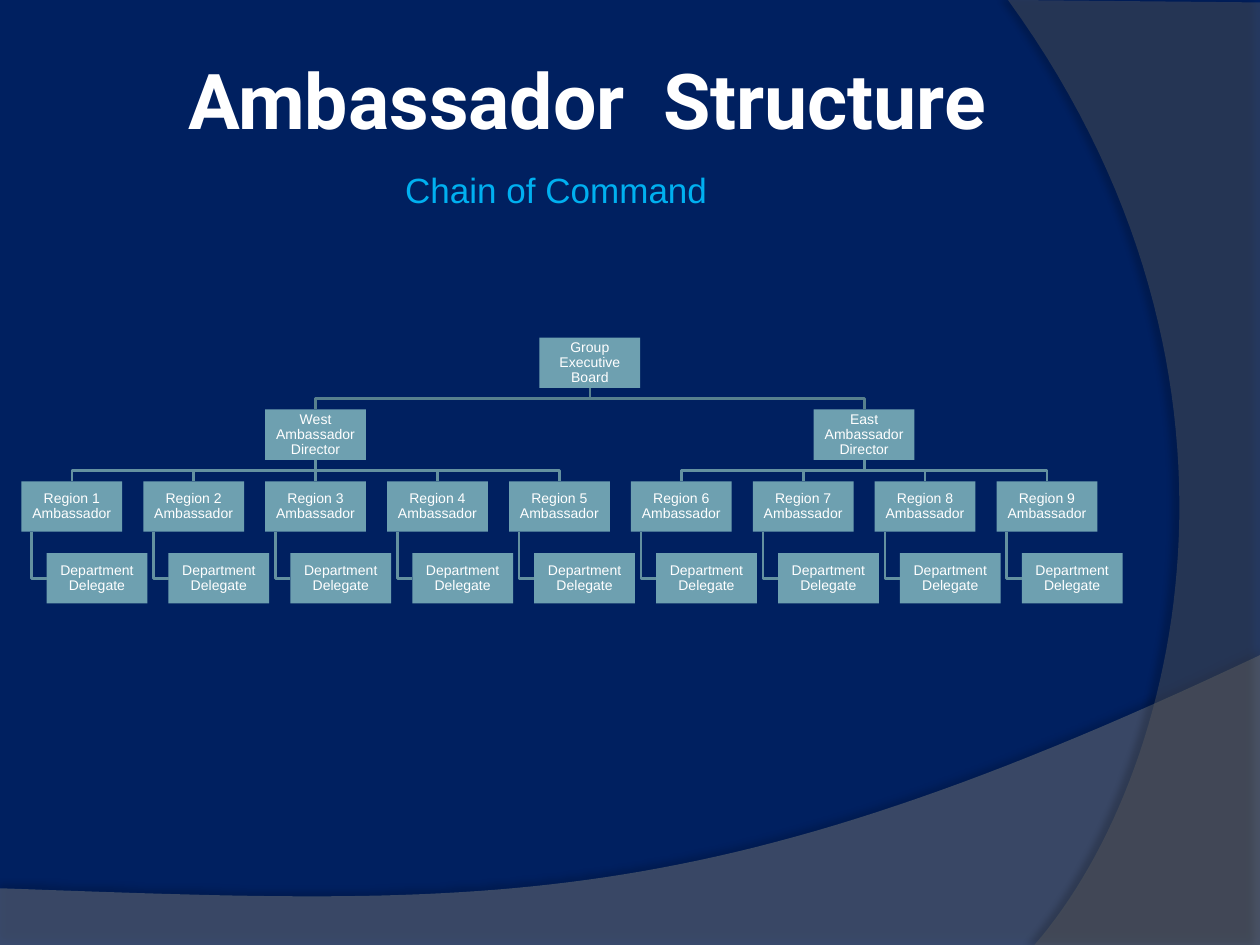
from lxml.etree import SubElement
from pptx import Presentation
from pptx.dml.color import RGBColor
from pptx.enum.shapes import MSO_CONNECTOR, MSO_SHAPE
from pptx.enum.text import MSO_ANCHOR, PP_ALIGN
from pptx.oxml.ns import qn
from pptx.util import Inches, Pt

COLORS = {
    "background": "002060",
    "lower_wave": "7F7F7F",
    "side_wave": "5E5E5E",
    "shadow": "000000",
    "title": "FFFFFF",
    "subtitle": "00B0F0",
    "box": "6EA0B0",
    "box_text": "FFFFFF",
    "board_line": "58808D",
    "line": "6491A0",
}
DIRECTORS = {
    "West Ambassador Director": range(1, 6),
    "East Ambassador Director": range(6, 10),
}
BOX_WIDTH, BOX_HEIGHT = 0.8, 0.4
DELEGATE_INDENT, HOOK_INDENT = 0.2, 0.08


def rgb(name):
    """Return the named palette colour."""
    return RGBColor.from_string(COLORS[name])


def curve(start, control_1, control_2, end, steps=60):
    """Return points along a cubic curve, ends included."""
    points = []
    for step in range(steps + 1):
        t = step / steps
        weights = ((1 - t) ** 3, 3 * t * (1 - t) ** 2, 3 * t * t * (1 - t), t ** 3)
        knots = (start, control_1, control_2, end)
        points.append(tuple(sum(w * k[axis] for w, k in zip(weights, knots)) for axis in (0, 1)))
    return points


def add_outline(slide, points, close):
    """Draw a freeform through points given in inches."""
    corners = [(Inches(x), Inches(y)) for x, y in points]
    builder = slide.shapes.build_freeform(*corners[0])
    builder.add_line_segments(corners[1:], close=close)
    outline = builder.convert_to_shape()
    outline.shadow.inherit = False
    return outline


def add_wave(slide, points, color, opacity, shadow_opacity, distance, direction):
    """Draw a translucent wave with a soft shadow."""
    wave = add_outline(slide, points, True)
    wave.fill.solid()
    wave.fill.fore_color.rgb = rgb(color)
    wave.line.fill.background()
    properties = wave._element.spPr
    fill_color = properties.find(qn("a:solidFill")).find(qn("a:srgbClr"))
    SubElement(fill_color, qn("a:alpha"), val=str(opacity * 1000))
    shadow = SubElement(
        properties.find(qn("a:effectLst")), qn("a:outerShdw"),
        blurRad=str(Pt(4)), dist=str(Pt(distance)), dir=str(direction * 60000),
        algn="ctr", rotWithShape="0",
    )
    shadow_color = SubElement(shadow, qn("a:srgbClr"), val=COLORS["shadow"])
    SubElement(shadow_color, qn("a:alpha"), val=str(shadow_opacity * 1000))


def add_backdrop(slide, width, height):
    """Colour the background and draw both waves."""
    slide.background.fill.solid()
    slide.background.fill.fore_color.rgb = rgb("background")
    lower_edge = curve((width, 5.2), (5.59, 7.29), (3.91, 7.19), (0, 7.05))
    add_wave(slide, [(0, height), (width, height)] + lower_edge, "lower_wave", 45, 35, 3.5, 270)
    side_edge = curve((8.21, height), (9.35, 6.19), (10.18, 3), (8, 0))
    add_wave(slide, [(width, 0.02), (width, height)] + side_edge, "side_wave", 40, 45, 4, 180)


def write(shape, text, size, font, color, anchor, margins, bold=False):
    """Put one centred paragraph into a shape."""
    frame = shape.text_frame
    frame.word_wrap = True
    frame.vertical_anchor = anchor
    frame.margin_left = frame.margin_right = Inches(margins[0])
    frame.margin_top = frame.margin_bottom = Inches(margins[1])
    frame.text = text
    paragraph = frame.paragraphs[0]
    paragraph.alignment = PP_ALIGN.CENTER
    style = paragraph.runs[0].font
    style.size, style.name, style.bold = Pt(size), font, bold
    style.color.rgb = rgb(color)
    return paragraph


def add_heading(slide, left, top, width):
    """Place the title and the subtitle below it."""
    title = slide.shapes.add_textbox(Inches(left), Inches(top), Inches(width), Inches(0.8))
    write(title, "Ambassador  Structure", 44, "Roboto", "title", MSO_ANCHOR.TOP, (0.05, 0), True)
    subtitle = slide.shapes.add_textbox(
        Inches(left + 2), Inches(top + 0.75), Inches(2.67), Inches(0.5))
    write(subtitle, "Chain of Command", 20, "Arial", "subtitle", MSO_ANCHOR.BOTTOM, (0.05, 0))


def add_box(slide, text, left, top):
    """Draw one labelled box of the chart."""
    box = slide.shapes.add_shape(
        MSO_SHAPE.RECTANGLE, Inches(left), Inches(top), Inches(BOX_WIDTH), Inches(BOX_HEIGHT))
    box.shadow.inherit = False
    box.fill.solid()
    box.fill.fore_color.rgb = rgb("box")
    box.line.fill.background()
    label = write(box, text, 8, "Arial", "box_text", MSO_ANCHOR.MIDDLE, (0.01, 0.01))
    label.line_spacing = 0.9
    return box


def add_branch(slide, points, color="line"):
    """Draw an angled line between two boxes."""
    branch = add_outline(slide, points, False)
    branch.fill.background()
    branch.line.color.rgb = rgb(color)
    branch.line.width = Pt(1.5)


def add_drop(slide, upper, lower):
    """Join two boxes that stand in one column."""
    drop = slide.shapes.add_connector(MSO_CONNECTOR.STRAIGHT, 0, 0, 0, 0)
    drop.begin_connect(upper, 2)
    drop.end_connect(lower, 0)
    drop.line.color.rgb = rgb("line")
    drop.line.width = Pt(1.5)
    SubElement(drop._element.spPr, qn("a:effectLst"))


def add_fork(slide, upper, lower, color="line"):
    """Lead a line from the foot of one box to the head of another."""
    (start_x, top), (end_x, bottom) = upper, lower
    middle = (top + bottom) / 2
    add_branch(slide, [upper, (start_x, middle), (end_x, middle), lower], color)


def add_chart_of_command(slide, left, top, width, height):
    """Draw the board, directors, regions and delegates in four levels."""
    region_count = sum(len(regions) for regions in DIRECTORS.values())
    column = (width - BOX_WIDTH - DELEGATE_INDENT) / (region_count - 1)
    level = (height - BOX_HEIGHT) / 3
    board_top, director_top, region_top, delegate_top = (top + level * i for i in range(4))
    half = BOX_WIDTH / 2
    director_centers = []
    for director, regions in DIRECTORS.items():
        center = left + half + column * ((regions[0] + regions[-1]) / 2 - 1)
        director_centers.append(center)
        director_box = add_box(slide, director, center - half, director_top)
        for region in regions:
            region_left = left + column * (region - 1)
            region_center = region_left + half
            region_box = add_box(slide, f"Region {region} Ambassador", region_left, region_top)
            if abs(region_center - center) < 0.01:
                add_drop(slide, director_box, region_box)
            else:
                add_fork(slide, (center, director_top + BOX_HEIGHT), (region_center, region_top))
            delegate_left = region_left + DELEGATE_INDENT
            add_box(slide, "Department Delegate", delegate_left, delegate_top)
            hook, hook_end = region_left + HOOK_INDENT, delegate_top + BOX_HEIGHT / 2
            add_branch(slide, [(hook, region_top + BOX_HEIGHT), (hook, hook_end),
                               (delegate_left, hook_end)])
    board_center = sum(director_centers) / len(director_centers)
    add_box(slide, "Group Executive Board", board_center - half, board_top)
    for center in director_centers:
        add_fork(slide, (board_center, board_top + BOX_HEIGHT), (center, director_top), "board_line")


def main():
    """Build and save the slide."""
    deck = Presentation()
    deck.slide_width, deck.slide_height = Inches(10), Inches(7.5)
    slide = deck.slides.add_slide(deck.slide_layouts[6])
    add_backdrop(slide, 10, 7.5)
    add_heading(slide, 1.08, 0.42, 7.17)
    add_chart_of_command(slide, 0.17, 2.68, 8.74, 2.11)
    deck.save("out.pptx")


if __name__ == "__main__":
    main()
